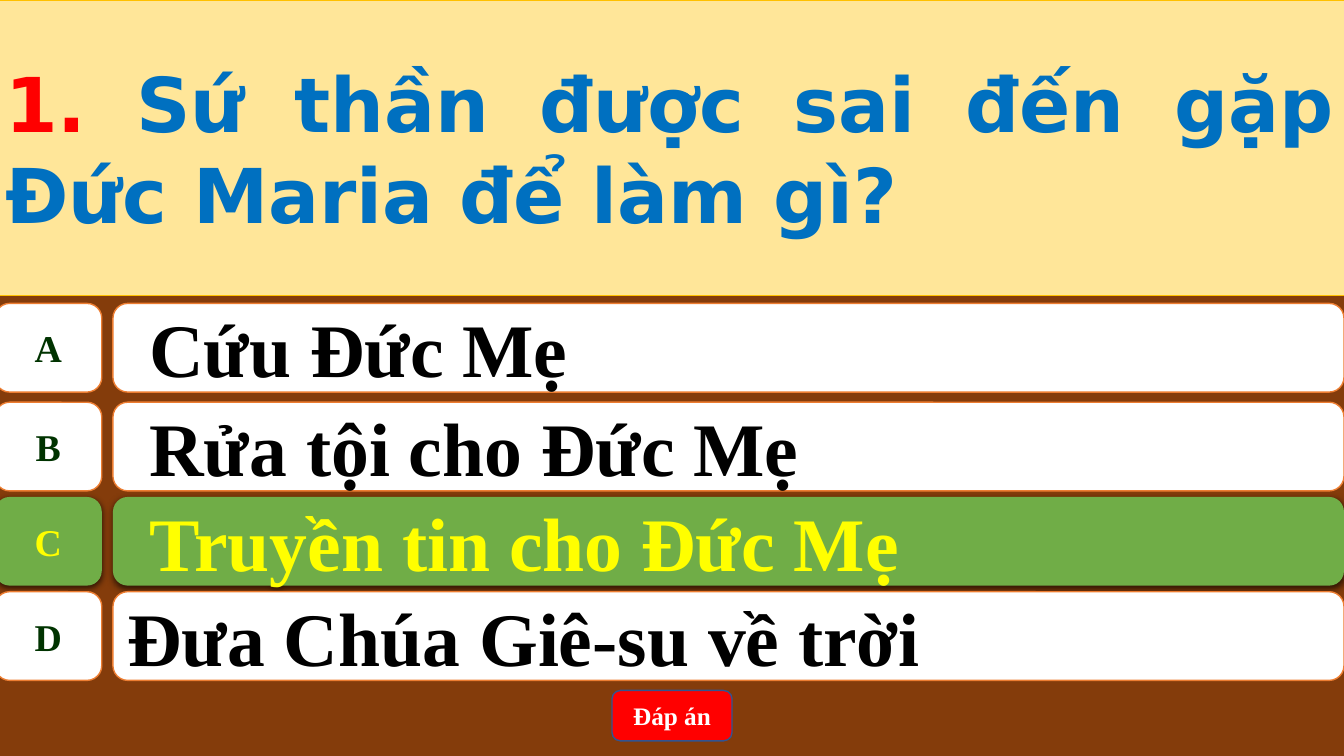
import lxml.etree
import pptx
import pptx.dml.color
import pptx.enum.shapes
import pptx.enum.text
import pptx.oxml.ns
import pptx.util

Inches = pptx.util.Inches
RGBColor = pptx.dml.color.RGBColor
Shapes = pptx.enum.shapes.MSO_SHAPE
Align = pptx.enum.text.PP_ALIGN

BROWN = RGBColor(0x84, 0x3C, 0x0B)
CREAM = RGBColor(0xFF, 0xE6, 0x99)
GOLD = RGBColor(0xFF, 0xC0, 0x00)
ORANGE = RGBColor(0xED, 0x7D, 0x31)
GREEN = RGBColor(0x70, 0xAD, 0x47)
DARK_GREEN = RGBColor(0x00, 0x33, 0x00)
BLUE = RGBColor(0x00, 0x70, 0xC0)
NAVY = RGBColor(0x32, 0x54, 0x91)
RED = RGBColor(0xFF, 0x00, 0x00)
YELLOW = RGBColor(0xFF, 0xFF, 0x00)
WHITE = RGBColor(0xFF, 0xFF, 0xFF)
BLACK = RGBColor(0x00, 0x00, 0x00)

LEFT_EDGE = -0.05
LETTER_WIDTH = 1.06
ANSWER_LEFT = 1.12
ANSWER_WIDTH = 12.21
ROW_HEIGHT = 0.88

# letter, answer, top, indented, correct
ANSWERS = [
    ("A", "Cứu Đức Mẹ", 3.01, True, False),
    ("B", "Rửa tội cho Đức Mẹ", 3.99, True, False),
    ("C", "Truyền tin cho Đức Mẹ", 4.93, True, True),
    ("D", "Đưa Chúa Giê-su về trời", 5.87, False, False),
]


class QuizSlide:
    question_font = "DejaVu Sans"
    answer_font = "Times New Roman"

    def __init__(self, presentation):
        self.slide = presentation.slides.add_slide(presentation.slide_layouts[5])
        background = self.slide.background.fill
        background.solid()
        background.fore_color.rgb = BROWN

    def place(self, shape, left, top, width, height):
        box = {"left": left, "top": top, "width": width, "height": height}
        for name, value in box.items():
            setattr(shape, name, Inches(value))

    def paint(self, shape, fill, line, line_width=1):
        shape.fill.solid()
        shape.fill.fore_color.rgb = fill
        if line is None:
            shape.line.fill.background()
        else:
            shape.line.color.rgb = line
            shape.line.width = pptx.util.Pt(line_width)

    def add_text(self, shape, runs, size, font, align, wrap=True):
        """Fill the shape with one paragraph of (text, colour) runs."""
        frame = shape.text_frame
        frame_format = {
            "auto_size": pptx.enum.text.MSO_AUTO_SIZE.NONE,
            "vertical_anchor": pptx.enum.text.MSO_ANCHOR.MIDDLE,
            "word_wrap": wrap,
        }
        for name, value in frame_format.items():
            setattr(frame, name, value)
        paragraph = frame.paragraphs[0]
        paragraph.alignment = align
        font_format = {"name": font, "size": pptx.util.Pt(size), "bold": True}
        for text, color in runs:
            run = paragraph.add_run()
            run.text = text
            for name, value in font_format.items():
                setattr(run.font, name, value)
            run.font.color.rgb = color
        return paragraph

    def question(self, number, text):
        title = self.slide.shapes.title
        self.place(title, LEFT_EDGE, 0, 13.39, 2.93)
        self.paint(title, CREAM, GOLD, 0.5)
        self.add_text(title, [(number, RED), (text, BLUE)], 54,
                      self.question_font, Align.JUSTIFY)

    def box(self, kind, bounds, fill, line):
        shape = self.slide.shapes.add_shape(kind, 0, 0, 0, 0)
        self.place(shape, *bounds)
        self.paint(shape, fill, line)
        shape.shadow.inherit = False
        return shape

    def cast_shadow(self, shape):
        qn = pptx.oxml.ns.qn
        effects = shape.element.spPr.find(qn("a:effectLst"))
        shadow = lxml.etree.SubElement(
            effects, qn("a:outerShdw"), blurRad=str(pptx.util.Pt(4.5)),
            dist=str(pptx.util.Pt(1.5)), dir="5400000", algn="ctr", rotWithShape="0")
        color = lxml.etree.SubElement(shadow, qn("a:srgbClr"), val=str(BLACK))
        lxml.etree.SubElement(color, qn("a:alpha"), val="63000")

    def answer(self, letter, text, top, indented, correct):
        fill, line = (GREEN, None) if correct else (WHITE, ORANGE)
        letter_color, text_color = (YELLOW, YELLOW) if correct else (DARK_GREEN, BLACK)

        text_box = self.box(Shapes.ROUNDED_RECTANGLE,
                            (ANSWER_LEFT, top, ANSWER_WIDTH, ROW_HEIGHT), fill, line)
        paragraph = self.add_text(text_box, [(text, text_color)], 54,
                                  self.answer_font, Align.LEFT)
        if indented:
            paragraph.level = 1
            properties = paragraph._p.get_or_add_pPr()
            properties.set("marL", str(Inches(0.5)))
            properties.set("indent", str(Inches(-0.28)))

        letter_box = self.box(Shapes.FLOWCHART_ALTERNATE_PROCESS,
                              (LEFT_EDGE, top, LETTER_WIDTH, ROW_HEIGHT), fill, line)
        self.add_text(letter_box, [(letter, letter_color)], 27,
                      self.answer_font, Align.CENTER, wrap=False)
        if correct:
            self.cast_shadow(text_box)
            self.cast_shadow(letter_box)

    def button(self, text):
        shape = self.box(Shapes.ROUNDED_RECTANGLE, (6.07, 6.85, 1.19, 0.5), RED, NAVY)
        self.add_text(shape, [(text, WHITE)], 18, self.answer_font, Align.CENTER)


def main():
    presentation = pptx.Presentation()
    presentation.slide_width = Inches(13.33)
    presentation.slide_height = Inches(7.5)
    quiz = QuizSlide(presentation)
    quiz.question("1. ", "Sứ thần được sai đến gặp Đức Maria để làm gì?")
    for answer in ANSWERS:
        quiz.answer(*answer)
    quiz.button("Đáp án")
    presentation.save("out.pptx")


if __name__ == "__main__":
    main()
